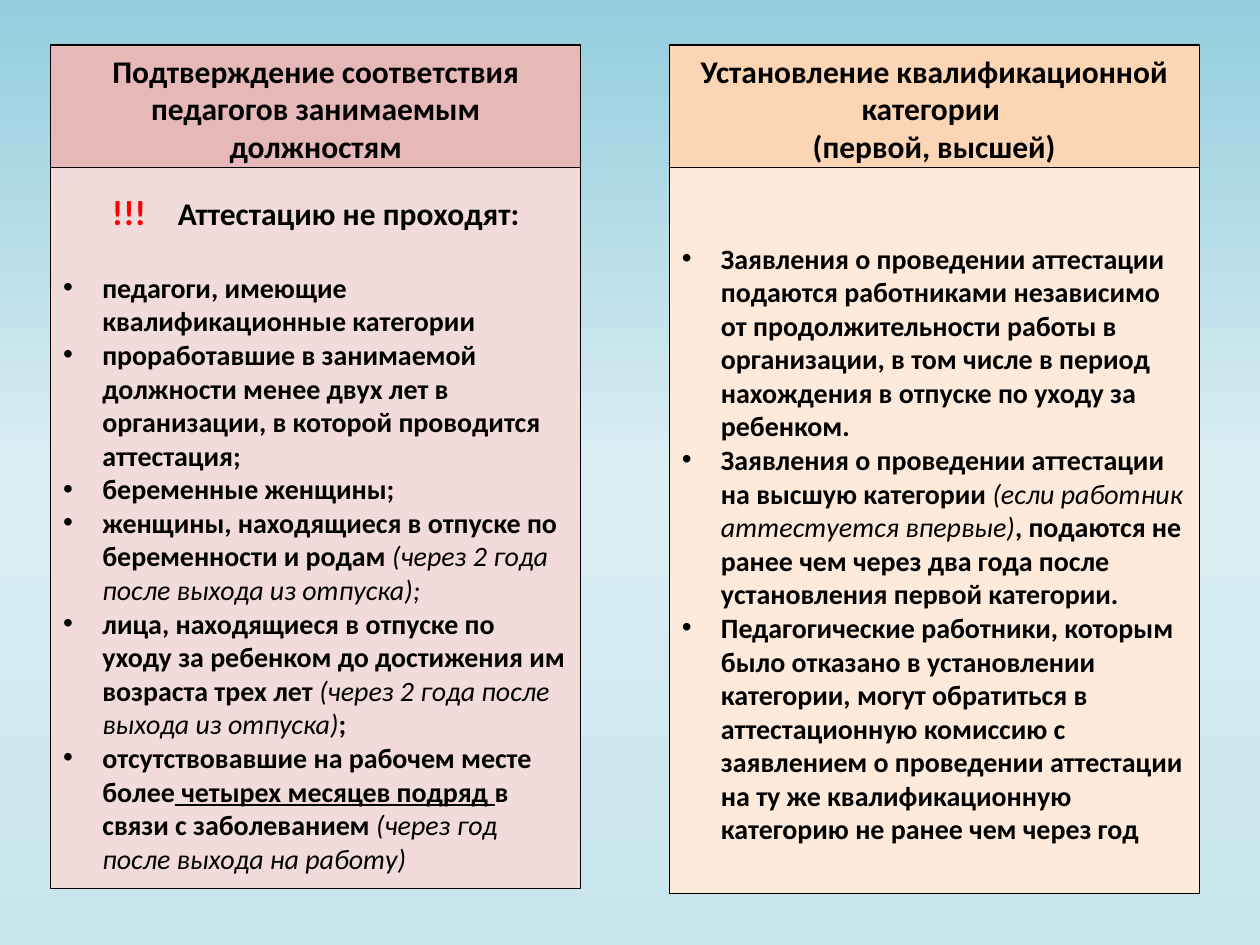
from copy import deepcopy

from lxml import etree
from pptx import Presentation
from pptx.dml.color import RGBColor
from pptx.enum.text import MSO_ANCHOR, MSO_AUTO_SIZE, PP_ALIGN
from pptx.oxml.ns import qn
from pptx.util import Cm, Pt

CENTER, LEFT = PP_ALIGN.CENTER, PP_ALIGN.LEFT
TOP, FIXED = MSO_ANCHOR.TOP, MSO_AUTO_SIZE.NONE
FONT = "Calibri"
BLACK, RED = "000000", "FF0000"
HANG = Cm(0.79)
WIDTH, HEAD_H, BODY_DY = 10.69, 2.57, 2.47
SKY = [(0, "93CDDD"), (0.5, "DBEEF4"), (1, "C8E5EE")]

# A list item is a list of runs: (text, style), style "b" bold, "i" italic, "u" bold underlined
EXEMPT = [
    [("педагоги, имеющие квалификационные категории", "b")],
    [("проработавшие в занимаемой должности менее двух лет в организации, "
      "в которой проводится аттестация;", "b")],
    [("беременные женщины;", "b")],
    [("женщины, находящиеся в отпуске по беременности и родам ", "b"),
     ("(через 2 года после выхода из отпуска);", "i")],
    [("лица, находящиеся в отпуске по уходу за ребенком до достижения им возраста трех лет ", "b"),
     ("(через 2 года после выхода из отпуска)", "i"), (";", "b")],
    [("отсутствовавшие на рабочем месте более", "b"), (" четырех месяцев подряд ", "u"),
     ("в связи с заболеванием ", "b"), ("(через год после выхода на работу)", "i")],
]
RULES = [
    [("Заявления о проведении аттестации подаются работниками независимо от "
      "продолжительности работы в организации, в том числе в период нахождения "
      "в отпуске по уходу за ребенком.", "b")],
    [("Заявления о проведении аттестации на высшую категории ", "b"),
     ("(если работник аттестуется впервые)", "i"),
     (", подаются не ранее чем через два года после установления первой категории.", "b")],
    [("Педагогические работники, которым было отказано в установлении категории, "
      "могут обратиться в аттестационную комиссию с заявлением о проведении аттестации "
      "на ту же квалификационную категорию не ранее чем через год", "b")],
]


def rgb(code):
    return RGBColor.from_string(code)


def paint_sky(slide):
    fill = slide.background.fill
    fill.gradient()
    fill.gradient_angle = 270
    stops = slide._element.find(".//" + qn("a:gsLst"))
    stops.append(deepcopy(stops[0]))
    for stop, (place, code) in zip(fill.gradient_stops, SKY):
        stop.position = place
        stop.color.rgb = rgb(code)


def set_box(shape, box, color, inset):
    """Place and fill a panel; return its empty text frame."""
    shape.left, shape.top, shape.width, shape.height = (Cm(v) for v in box)
    shape.fill.solid()
    shape.fill.fore_color.rgb = rgb(color)
    shape.line.color.rgb = rgb(BLACK)
    shape.line.width = Pt(0.75)
    frame = shape.text_frame
    frame.word_wrap = True
    frame.auto_size = FIXED
    frame.vertical_anchor = TOP
    frame.margin_top = Cm(inset)
    return frame


def add_para(frame, bullet=False, after=0):
    para = frame.paragraphs[0]
    if para.runs:
        para = frame.add_paragraph()
    para.alignment = LEFT if bullet else CENTER
    para.line_spacing = 1.0
    para.space_before, para.space_after = Pt(0), Pt(after)
    props = para._p.get_or_add_pPr()
    indent = HANG if bullet else 0
    props.set("marL", str(indent))
    props.set("indent", str(-indent))
    if bullet:
        etree.SubElement(props, qn("a:buFont")).set("typeface", "Arial")
        etree.SubElement(props, qn("a:buChar")).set("char", "•")
    else:
        etree.SubElement(props, qn("a:buNone"))
    return para


def add_run(para, text, size, style="b", color=BLACK):
    run = para.add_run()
    run.text = text
    font = run.font
    font.name, font.size = FONT, Pt(size)
    font.bold, font.italic = style != "i", style == "i"
    font.underline = style == "u"
    font.color.rgb = rgb(color)
    return run


def fill_head(shape, box, color, lines):
    frame = set_box(shape, box, color, 0.13)
    for line in lines:
        add_run(add_para(frame), line, 18)


def add_alert(frame):
    para = add_para(frame, after=21.6)
    add_run(para, "!!!", 20, color=RED)
    gap = add_run(para, " ", 18)
    gap._r.get_or_add_rPr().set("spc", "1400")
    add_run(para, "Аттестацию не проходят:", 18)


def fill_list(frame, items):
    for item in items:
        para = add_para(frame, bullet=True)
        for text, style in item:
            add_run(para, text, 16, style)


def add_column(head, body, box, colors, lines, items, inset, alert=False):
    """Fill a heading and the list panel under it; box is left, top, list height."""
    left, top, height = box
    fill_head(head, (left, top, WIDTH, HEAD_H), colors[0], lines)
    frame = set_box(body, (left, top + BODY_DY, WIDTH, height), colors[1], inset)
    if alert:
        add_alert(frame)
    fill_list(frame, items)


def main():
    deck = Presentation()
    deck.slide_width, deck.slide_height = Cm(25.4), Cm(19.05)
    slide = deck.slides.add_slide(deck.slide_layouts.get_by_name("Comparison"))
    paint_sky(slide)
    title, *panels = slide.placeholders
    title._element.getparent().remove(title._element)
    add_column(*panels[:2], (1.02, 0.91, 14.53), ("E6B9B8", "F2DCDB"),
               ["Подтверждение соответствия педагогов занимаемым должностям"],
               EXEMPT, 0.46, alert=True)
    add_column(*panels[2:4], (13.49, 0.91, 14.63), ("FCD5B5", "FDEADA"),
               ["Установление квалификационной категории ", "(первой, высшей)"],
               RULES, 1.48)
    deck.save("out.pptx")


if __name__ == "__main__":
    main()
